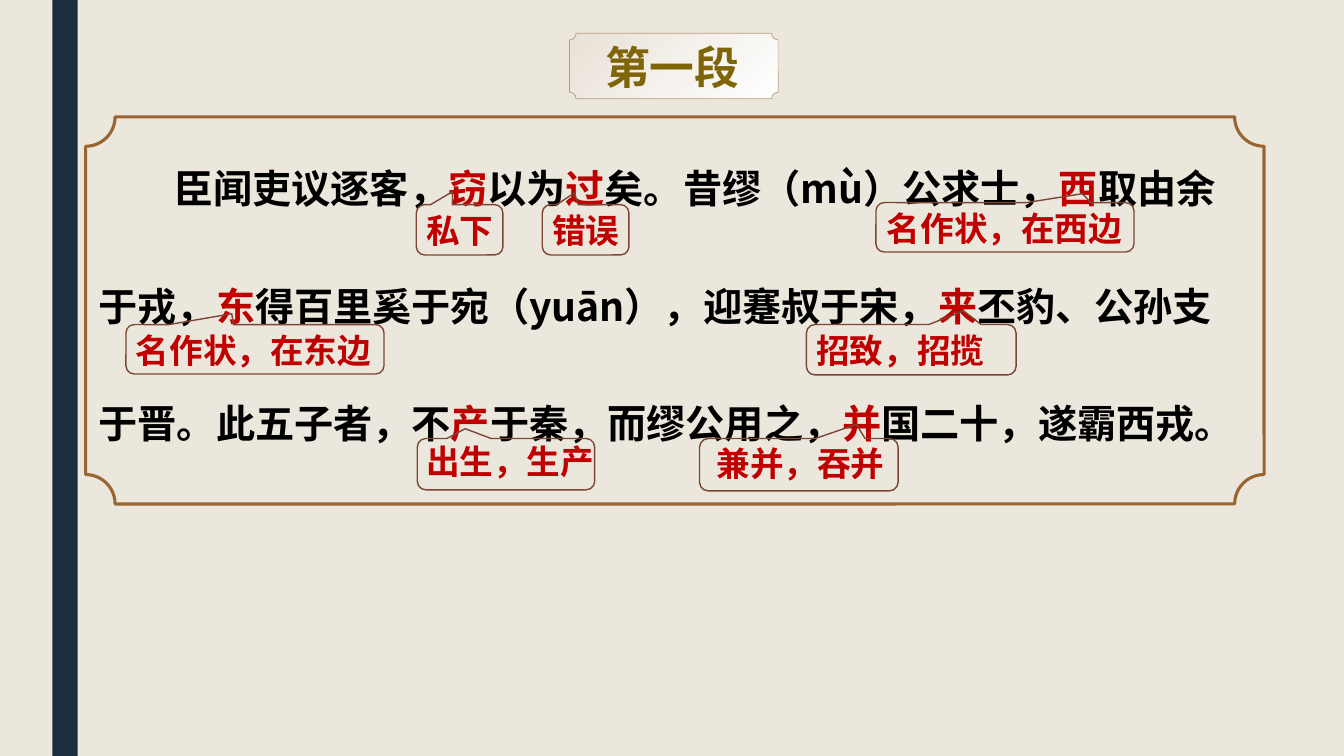
from dataclasses import dataclass

from lxml import etree
from pptx import Presentation
from pptx.dml.color import RGBColor
from pptx.dml.fill import FillFormat
from pptx.enum.shapes import MSO_SHAPE
from pptx.enum.text import MSO_ANCHOR, MSO_AUTO_SIZE, PP_ALIGN
from pptx.oxml.ns import qn
from pptx.shapes.autoshape import Shape
from pptx.shapes.shapetree import _BaseGroupShapes
from pptx.text.text import TextFrame, _Run
from pptx.util import Inches, Pt

RECTANGLE = MSO_SHAPE.RECTANGLE
PLAQUE = MSO_SHAPE.PLAQUE
CALLOUT = MSO_SHAPE.ROUNDED_RECTANGULAR_CALLOUT
CENTER = PP_ALIGN.CENTER
TOP = MSO_ANCHOR.TOP
GROW = MSO_AUTO_SIZE.SHAPE_TO_FIT_TEXT

# The slide is a grid of square cells, 133.3 columns by 75 rows
CELL = Inches(0.1)
COLUMNS, ROWS = 133.33, 75
CHINESE_FONT = "Noto Sans CJK SC"
NOTE_FONT = "Karla"
NOTE_HEIGHT = 5
COLORS = {
    "background": "EBE7DD",
    "bar": "1A2E40",
    "plate_start": "E9E1D7",
    "plate_end": "FFFFFF",
    "plate_line": "B59C7C",
    "title_start": "7E6507",
    "title_end": "7D4534",
    "frame": "996633",
    "callout": "7D4534",
    "text": "000000",
    "keyword": "C00000",
}
# Keywords stand between bars
PASSAGE = (
    "臣闻吏议逐客，|窃|以为|过|矣。昔缪（mù）公求士，|西|取由余于戎，|东|"
    "得百里奚于宛（yuān），迎蹇叔于宋，|来|丕豹、公孙支于晋。此五子者，不|产|"
    "于秦，而缪公用之，|并|国二十，遂霸西戎。"
)


@dataclass(frozen=True)
class Box:
    left: float
    top: float
    width: float
    height: float

    def lengths(self) -> tuple[int, ...]:
        cells = (self.left, self.top, self.width, self.height)
        return tuple(round(count * CELL) for count in cells)


@dataclass(frozen=True)
class Note:
    meaning: str
    bubble: Box
    tip: tuple[float, float]
    text_left: float
    text_top: float
    text_width: float


NOTES = [
    Note("名作状，在西边", Box(86.9, 20.1, 25.6, 4.9), (0.3, -0.68), 87, 20.1, 25.6),
    Note("招致，招揽", Box(80, 32.2, 20.8, 5), (0.25, -0.77), 80, 32.2, 26.6),
    Note("兼并，吞并", Box(69.4, 43.5, 19.7, 5.2), (0.29, -0.77), 70.1, 43.4, 20.5),
    Note("出生，生产", Box(41.4, 43.5, 17.6, 5.1), (-0.23, -0.69), 41.3, 43.3, 22.6),
    Note("私下", Box(41.3, 20.3, 8.6, 5), (-0.08, -0.76), 41.3, 20.3, 10.3),
    Note("错误", Box(53.8, 20.3, 8.6, 5), (-0.13, -0.73), 53.8, 20.3, 8.8),
    Note("名作状，在东边", Box(12.5, 32.2, 25.6, 4.9), (-0.09, -0.72), 12.5, 32.2, 25.6),
]


def color(name: str) -> RGBColor:
    return RGBColor.from_string(COLORS[name])


def fill_gradient(fill: FillFormat, start: str, end: str) -> None:
    fill.gradient()
    fill.gradient_angle = 315
    for stop, name in zip(fill.gradient_stops, (start, end)):
        stop.color.rgb = color(name)


def add_outline(shapes: _BaseGroupShapes, preset: MSO_SHAPE, box: Box,
                line: str, points: float, adjustments: tuple[float, ...]) -> Shape:
    outline = shapes.add_shape(preset, *box.lengths())
    outline.shadow.inherit = False
    outline.fill.background()
    outline.line.color.rgb = color(line)
    outline.line.width = Pt(points)
    for index, value in enumerate(adjustments):
        outline.adjustments[index] = value
    return outline


def add_text_area(shapes: _BaseGroupShapes, box: Box) -> TextFrame:
    frame = shapes.add_textbox(*box.lengths()).text_frame
    frame.word_wrap = True
    frame.auto_size = GROW
    return frame


def format_run(run: _Run, size: float, latin: str) -> None:
    run.font.size = Pt(size)
    run.font.bold = True
    run.font.name = latin
    east_asian = etree.Element(qn("a:ea"), typeface=CHINESE_FONT)
    run.font._element.find(qn("a:latin")).addnext(east_asian)


def add_note(shapes: _BaseGroupShapes, note: Note) -> None:
    pair = shapes.add_group_shape().shapes
    add_outline(pair, CALLOUT, note.bubble, "callout", 1, (*note.tip, 0.167))
    area = Box(note.text_left, note.text_top, note.text_width, NOTE_HEIGHT)
    paragraph = add_text_area(pair, area).paragraphs[0]
    paragraph.text = note.meaning
    run = paragraph.runs[0]
    format_run(run, 24, NOTE_FONT)
    run.font.color.rgb = color("keyword")


def add_passage(shapes: _BaseGroupShapes) -> None:
    group = shapes.add_group_shape().shapes
    add_outline(group, PLAQUE, Box(8.5, 11.6, 116.9, 38.4), "frame", 2.25, (0.076,))
    paragraph = add_text_area(group, Box(8.8, 8.8, 116.2, 34.3)).paragraphs[0]
    paragraph.line_spacing = 2.5
    paragraph._p.get_or_add_pPr().set("indent", str(Inches(0.75)))
    for index, part in enumerate(PASSAGE.split("|")):
        run = paragraph.add_run()
        run.text = part
        format_run(run, 28, CHINESE_FONT)
        run.font.color.rgb = color("keyword" if index % 2 else "text")


def main() -> None:
    deck = Presentation()
    deck.slide_width = round(COLUMNS * CELL)
    deck.slide_height = ROWS * CELL
    slide = deck.slides.add_slide(deck.slide_layouts[5])
    slide.background.fill.solid()
    slide.background.fill.fore_color.rgb = color("background")
    shapes = slide.shapes

    # Side bar
    bar = shapes.add_shape(RECTANGLE, *Box(5.2, 0, 2.5, ROWS).lengths())
    bar.shadow.inherit = False
    bar.fill.solid()
    bar.fill.fore_color.rgb = color("bar")
    bar.line.fill.background()

    # Heading in front of its plate
    plate = add_outline(shapes, PLAQUE, Box(56.5, 3.3, 20.7, 6.5), "plate_line", 0.5, (0.102,))
    fill_gradient(plate.fill, "plate_start", "plate_end")
    heading = shapes.title
    plate.element.addnext(heading.element)
    heading.left, heading.top, heading.width, heading.height = Box(50.1, 3.4, 33.2, 6.4).lengths()
    heading.text_frame.text = "第一段"
    heading.text_frame.word_wrap = True
    heading.text_frame.auto_size = GROW
    heading.text_frame.vertical_anchor = TOP
    heading_line = heading.text_frame.paragraphs[0]
    heading_line.alignment = CENTER
    format_run(heading_line.runs[0], 32, CHINESE_FONT)
    fill_gradient(heading_line.runs[0].font.fill, "title_start", "title_end")

    # Passage and word notes
    add_passage(shapes)
    for note in NOTES:
        add_note(shapes, note)

    deck.save("out.pptx")


if __name__ == "__main__":
    main()
